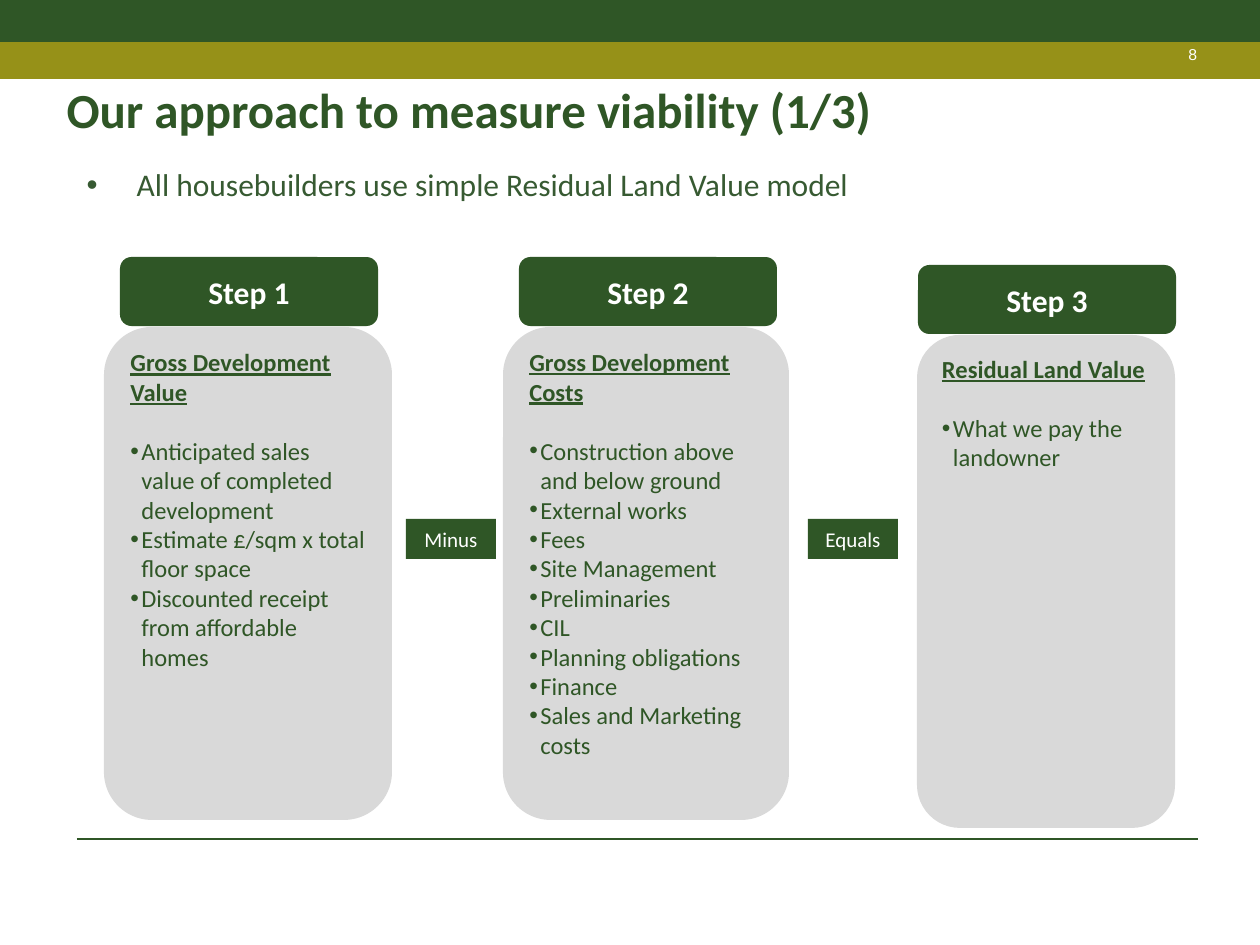
from dataclasses import dataclass

from lxml.etree import SubElement
from pptx import Presentation
from pptx.dml.color import RGBColor
from pptx.enum.shapes import MSO_CONNECTOR as Connector, MSO_SHAPE as Shape
from pptx.enum.text import MSO_ANCHOR as Anchor, MSO_AUTO_SIZE as AutoSize, PP_ALIGN as Align
from pptx.oxml.ns import qn
from pptx.util import Pt


@dataclass(frozen=True)
class Theme:
    green: str = "2F5626"
    olive: str = "969118"
    body_green: str = "375A32"
    grey: str = "D9D9D9"
    white: str = "FFFFFF"
    font: str = "Calibri"
    number_font: str = "Arial"
    title_size: int = 28
    lead_size: int = 18
    panel_size: int = 14
    label_size: int = 12
    number_size: int = 9


theme = Theme()

# Content
TITLE = "Our approach to measure viability (1/3)"
LEAD = "All housebuilders use simple Residual Land Value model"
PAGE_NUMBER = "8"
STEPS = [
    {"name": "Step 1", "top": 257, "panel": (104, 288), "heading": "Gross Development Value",
     "points": ["Anticipated sales value of completed development",
                "Estimate £/sqm x total floor space",
                "Discounted receipt from affordable homes"]},
    {"name": "Step 2", "top": 257, "panel": (503, 286), "heading": "Gross Development Costs",
     "points": ["Construction above and below ground", "External works", "Fees",
                "Site Management", "Preliminaries", "CIL", "Planning obligations",
                "Finance", "Sales and Marketing costs"]},
    {"name": "Step 3", "top": 265, "panel": (917, 258), "heading": "Residual Land Value",
     "points": ["What we pay the landowner"]},
]
OPERATORS = [("Minus", 406), ("Equals", 808)]

# Layout in px, 126 to the inch
SCALE = 914400 / 126
SLIDE_WIDTH, SLIDE_HEIGHT = 1260, 945
STEP_LEFT, STEP_PITCH, STEP_WIDTH, STEP_HEIGHT = 120, 399, 258, 69
PANEL_HEIGHT = 493


def px(length):
    return round(length * SCALE)


def place(shape, left, top, width, height):
    shape.left, shape.top, shape.width, shape.height = map(px, (left, top, width, height))


def color(value):
    return RGBColor.from_string(value)


def style(paragraph, size, ink, bold=False, underline=False, name=theme.font):
    font = paragraph.font
    font.name, font.size, font.bold, font.underline = name, Pt(size), bold, underline
    font.color.rgb = color(ink)


def add_bullet(paragraph, indent):
    properties = paragraph._p.get_or_add_pPr()
    properties.set("marL", str(px(indent)))
    properties.set("indent", str(-px(indent)))
    SubElement(properties, qn("a:buFont"), typeface="Arial")
    SubElement(properties, qn("a:buChar"), char="•")


def add_block(slide, kind, box, fill):
    shape = slide.shapes.add_shape(kind, *map(px, box))
    shape.shadow.inherit = False
    shape.fill.solid()
    shape.fill.fore_color.rgb = color(fill)
    shape.line.fill.background()
    return shape


def add_label(slide, kind, box, text, size, bold=False):
    frame = add_block(slide, kind, box, theme.green).text_frame
    frame.text = text
    frame.vertical_anchor = Anchor.MIDDLE
    frame.paragraphs[0].alignment = Align.CENTER
    style(frame.paragraphs[0], size, theme.white, bold)


def add_panel(slide, box, heading, points):
    frame = add_block(slide, Shape.ROUNDED_RECTANGLE, box, theme.grey).text_frame
    frame.word_wrap = True
    frame.vertical_anchor = Anchor.TOP
    frame.text = "\n".join([heading, *points])
    first, *rest = frame.paragraphs
    first.alignment = Align.LEFT
    first.space_after = Pt(17)
    style(first, theme.panel_size, theme.green, bold=True, underline=True)
    for paragraph in rest:
        paragraph.alignment = Align.LEFT
        add_bullet(paragraph, 11)
        style(paragraph, theme.panel_size, theme.green)


def add_frame(slide):
    # Bands, page number and footer rule
    add_block(slide, Shape.RECTANGLE, (0, 42, SLIDE_WIDTH, 37), theme.olive)
    add_block(slide, Shape.RECTANGLE, (0, 0, SLIDE_WIDTH, 42), theme.green)
    rule = slide.shapes.add_connector(Connector.STRAIGHT, px(77), px(839), px(1198), px(839))
    rule.line.color.rgb = color(theme.green)
    rule.line.width = Pt(0.75)
    SubElement(rule._element.spPr, qn("a:effectLst"))
    frame = slide.shapes.add_textbox(px(1142), px(29), px(55), px(50)).text_frame
    frame.margin_left = frame.margin_right = frame.margin_top = frame.margin_bottom = 0
    frame.word_wrap = True
    frame.vertical_anchor = Anchor.MIDDLE
    frame.text = PAGE_NUMBER
    frame.paragraphs[0].alignment = Align.RIGHT
    style(frame.paragraphs[0], theme.number_size, theme.white, name=theme.number_font)


def fill_placeholders(slide):
    title, body = slide.shapes.title, slide.placeholders[1]
    place(title, 54, 44, 1071, 101)
    place(body, 74, 159, 946, 50)
    for shape, text, anchor in ((title, TITLE, Anchor.BOTTOM), (body, LEAD, Anchor.TOP)):
        frame = shape.text_frame
        frame.text = text
        frame.auto_size = AutoSize.NONE
        frame.vertical_anchor = anchor
        frame.paragraphs[0].alignment = Align.LEFT
        frame.paragraphs[0].space_before = Pt(0)
    heading, lead = title.text_frame.paragraphs[0], body.text_frame.paragraphs[0]
    heading.line_spacing = 0.9
    style(heading, theme.title_size, theme.green, bold=True)
    add_bullet(lead, 50)
    style(lead, theme.lead_size, theme.body_green)


def main():
    presentation = Presentation()
    presentation.slide_width, presentation.slide_height = px(SLIDE_WIDTH), px(SLIDE_HEIGHT)
    slide = presentation.slides.add_slide(presentation.slide_layouts[1])
    add_frame(slide)
    fill_placeholders(slide)

    # Operators between the steps
    for text, left in OPERATORS:
        add_label(slide, Shape.RECTANGLE, (left, 519, 90, 40), text, theme.label_size)

    # Each step: a header with its panel right below
    for index, step in enumerate(STEPS):
        header = (STEP_LEFT + index * STEP_PITCH, step["top"], STEP_WIDTH, STEP_HEIGHT)
        add_label(slide, Shape.ROUNDED_RECTANGLE, header, step["name"], theme.lead_size, bold=True)
        left, width = step["panel"]
        panel = (left, step["top"] + STEP_HEIGHT + 1, width, PANEL_HEIGHT)
        add_panel(slide, panel, step["heading"], step["points"])

    presentation.save("out.pptx")


if __name__ == "__main__":
    main()
